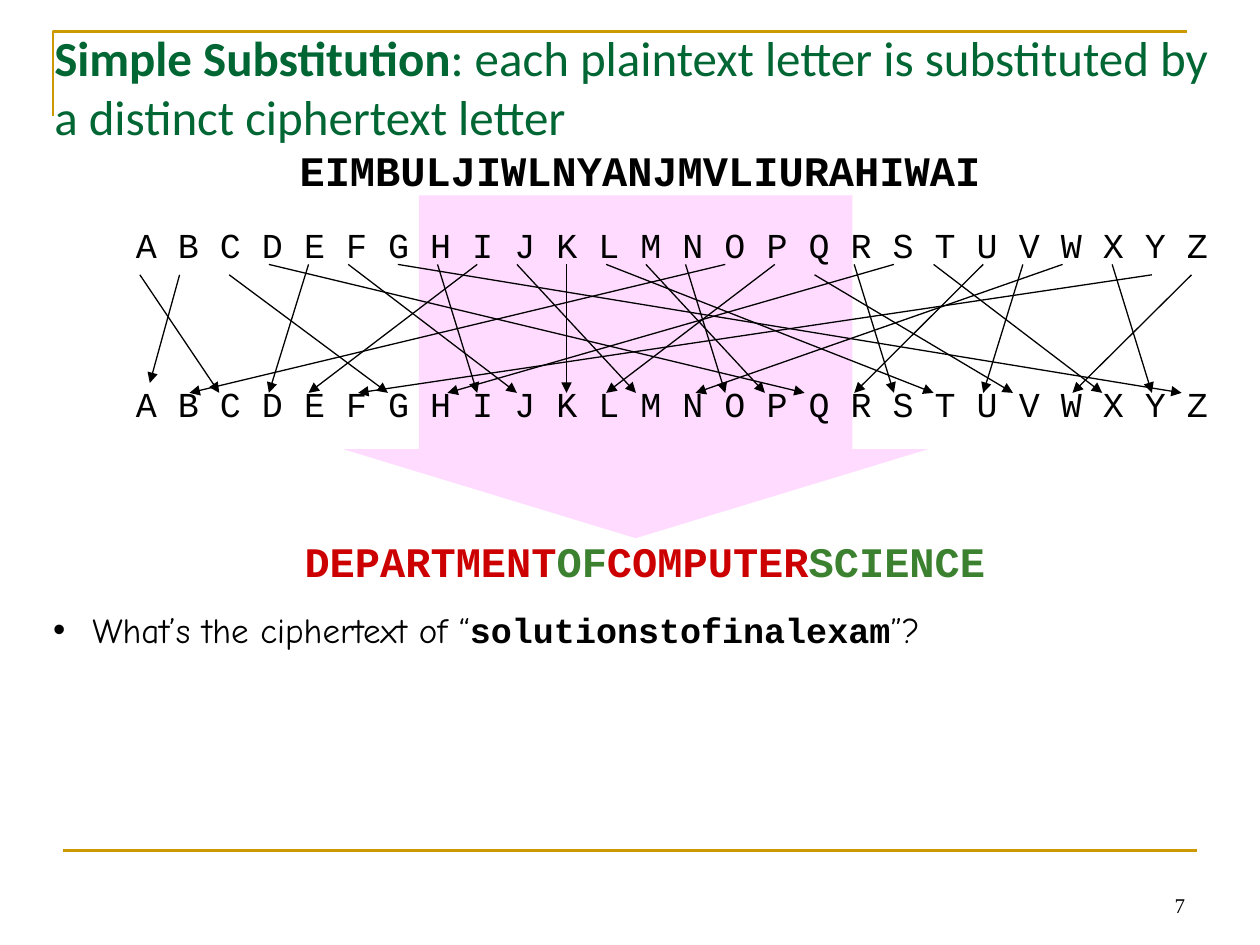
from dataclasses import dataclass

from lxml.etree import SubElement
from pptx import Presentation
from pptx.dml.color import RGBColor
from pptx.enum.shapes import MSO_CONNECTOR, MSO_SHAPE
from pptx.enum.text import MSO_ANCHOR, MSO_AUTO_SIZE, PP_ALIGN
from pptx.oxml.ns import qn
from pptx.util import Cm, Pt


@dataclass(frozen=True)
class Theme:
    gold: str = "CC9900"
    green: str = "006633"
    leaf: str = "3B812F"
    red: str = "CC0000"
    pink: str = "FFCCFF"
    black: str = "000000"
    heading: str = "Calibri"
    body: str = "Comic Neue"
    code: str = "Courier New"
    number: str = "Times New Roman"
    title_size: int = 28
    message_size: int = 24
    text_size: int = 20
    number_size: int = 12


@dataclass(frozen=True)
class Box:
    left: float
    top: float
    width: float
    height: float

    def lengths(self) -> tuple:
        return Cm(self.left), Cm(self.top), Cm(self.width), Cm(self.height)


@dataclass(frozen=True)
class Run:
    text: str
    color: str
    font: str
    bold: bool = False


THEME = Theme()
LETTERS = "ABCDEFGHIJKLMNOPQRSTUVWXYZ"
# Letter each one of LETTERS is linked to, in order
SUBSTITUTES = "CAGQDJZIEMKTPOBLVSHXRUNYFW"
# Arrow columns, counted in steps of 0.2 cm from the first letter
COLUMNS = (0, 4, 9, 13, 17, 21, 26, 30, 34, 38, 43, 47, 51,
           55, 59, 64, 68, 72, 76, 80, 85, 89, 93, 98, 102, 106)
FIRST_COLUMN, STEP = 2.82, 0.2
LOW_STARTS = "ABCQYZ"
ENDS_RIGHT, ENDS_LEFT = "ABFHNW", "CGMPQVXZ"


def color(value: str) -> RGBColor:
    return RGBColor.from_string(value)


def write_text(shape, runs: list[Run], *, size: int, align=PP_ALIGN.LEFT,
               anchor=MSO_ANCHOR.TOP, spacing: float = 0, margin: float | None = None):
    """Fill a shape with one paragraph and return that paragraph."""
    frame = shape.text_frame
    frame.word_wrap = True
    frame.auto_size = MSO_AUTO_SIZE.NONE
    frame.vertical_anchor = anchor
    if margin is not None:
        frame.margin_left = frame.margin_right = Cm(margin)
        frame.margin_top = frame.margin_bottom = Cm(margin)
    paragraph = frame.paragraphs[0]
    paragraph.alignment = align
    paragraph.space_before = paragraph.space_after = Pt(spacing)
    for item in runs:
        run = paragraph.add_run()
        run.text = item.text
        run.font.name = item.font
        run.font.size = Pt(size)
        run.font.bold = item.bold
        run.font.color.rgb = color(item.color)
    return paragraph


def add_text(slide, box: Box, runs: list[Run], **text_format):
    return write_text(slide.shapes.add_textbox(*box.lengths()), runs, **text_format)


def place(placeholder, box: Box) -> None:
    (placeholder.left, placeholder.top,
     placeholder.width, placeholder.height) = box.lengths()


def add_line(slide, start: tuple[float, float], end: tuple[float, float],
             line_color: str, width: float, arrow: bool = False) -> None:
    connector = slide.shapes.add_connector(
        MSO_CONNECTOR.STRAIGHT, *map(Cm, start), *map(Cm, end))
    connector.line.color.rgb = color(line_color)
    connector.line.width = Pt(width)
    if arrow:
        SubElement(connector.line._get_or_add_ln(), qn("a:tailEnd"), type="triangle")
    SubElement(connector._element.spPr, qn("a:effectLst"))


def add_frame(slide) -> None:
    """Draw the gold corner and the footer rule."""
    builder = slide.shapes.build_freeform(Cm(1.07), Cm(2.34), scale=1.0)
    builder.add_line_segments(
        [(Cm(1.07), Cm(0.64)), (Cm(23.93), Cm(0.64))], close=False)
    corner = builder.convert_to_shape()
    corner.fill.background()
    corner.line.color.rgb = color(THEME.gold)
    corner.line.width = Pt(1.5)
    corner.shadow.inherit = False
    add_line(slide, (1.27, 17.15), (24.13, 17.15), THEME.gold, 1.5)


def add_down_arrow(slide) -> None:
    box = Box(6.91, 3.94, 11.81, 6.91)
    arrow = slide.shapes.add_shape(MSO_SHAPE.DOWN_ARROW, *box.lengths())
    arrow.adjustments[0] = 0.74
    arrow.adjustments[1] = 0.26
    arrow.fill.solid()
    arrow.fill.fore_color.rgb = color(THEME.pink)
    fill_color = arrow._element.spPr.find(qn("a:solidFill"))[0]
    SubElement(fill_color, qn("a:alpha"), val="70000")
    arrow.line.fill.background()
    arrow.shadow.inherit = False


def add_substitution(slide) -> None:
    """Draw both alphabets and the arrows between them."""
    for top in (4.39, 7.59):
        add_text(slide, Box(2.49, top, 22.91, 1.09),
                 [Run(" ".join(LETTERS), THEME.black, THEME.code)],
                 size=THEME.text_size, spacing=3)
    column_of = dict(zip(LETTERS, COLUMNS))
    for letter, substitute in zip(LETTERS, SUBSTITUTES):
        nudge = (substitute in ENDS_RIGHT) - (substitute in ENDS_LEFT)
        start = (FIRST_COLUMN + STEP * column_of[letter],
                 5.54 if letter in LOW_STARTS else 5.33)
        end = (FIRST_COLUMN + STEP * (column_of[substitute] + nudge),
               7.72 if substitute == "A" else 7.92)
        add_line(slide, start, end, THEME.black, 0.75, arrow=True)


def main() -> None:
    presentation = Presentation()
    presentation.slide_width, presentation.slide_height = Cm(25.4), Cm(19.05)
    slide = presentation.slides.add_slide(presentation.slide_layouts[1])
    add_frame(slide)

    # Title
    title = slide.shapes.title
    place(title, Box(0.84, 0.43, 24.08, 2.31))
    write_text(title, [
        Run("Simple Substitution", THEME.green, THEME.heading, True),
        Run(": each plaintext letter is substituted by a distinct ciphertext letter",
            THEME.green, THEME.heading),
    ], size=THEME.title_size)

    # Decoded message, substitution and ciphertext
    words = (("DEPARTMENT", THEME.red), ("OF", THEME.leaf),
             ("COMPUTER", THEME.red), ("SCIENCE", THEME.leaf))
    add_text(slide, Box(5.89, 10.67, 14.4, 1.27),
             [Run(word, word_color, THEME.code, True) for word, word_color in words],
             size=THEME.message_size, spacing=3.6)
    add_down_arrow(slide)
    add_substitution(slide)
    add_text(slide, Box(5.79, 2.79, 14.4, 1.27),
             [Run("EIMBULJIWLNYANJMVLIURAHIWAI", THEME.black, THEME.code, True)],
             size=THEME.message_size, spacing=3.6)

    # Question
    question = slide.placeholders[1]
    place(question, Box(1.07, 12.27, 23.5, 0.86))
    paragraph = write_text(question, [
        Run("What’s the ciphertext of “", THEME.black, THEME.body),
        Run("solutionstofinalexam", THEME.black, THEME.code, True),
        Run("”?", THEME.black, THEME.body),
    ], size=THEME.text_size, margin=0)
    properties = paragraph._p.get_or_add_pPr()
    properties.set("marL", str(Cm(0.79)))
    properties.set("indent", str(-Cm(0.79)))
    SubElement(properties, qn("a:buChar"), char="•")

    # Slide number
    add_text(slide, Box(18.21, 17.35, 5.93, 1.27),
             [Run("7", THEME.black, THEME.number)], size=THEME.number_size,
             align=PP_ALIGN.RIGHT, anchor=MSO_ANCHOR.BOTTOM)
    presentation.save("out.pptx")


if __name__ == "__main__":
    main()
